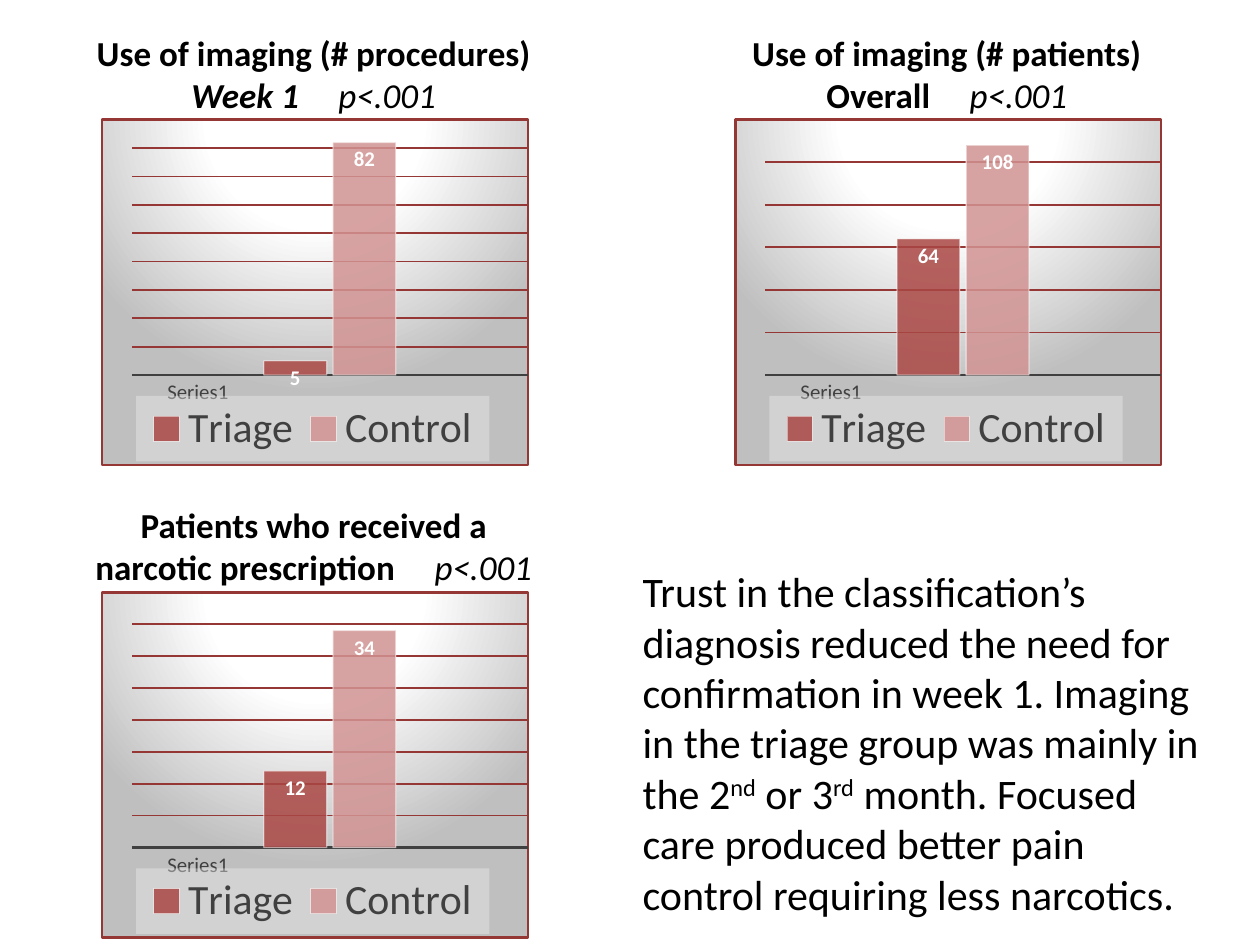
from lxml import etree
from pptx import Presentation
from pptx.chart.data import CategoryChartData
from pptx.dml.color import RGBColor
from pptx.enum import chart as charts, text
from pptx.oxml import parse_xml
from pptx.oxml.ns import qn
from pptx.util import Pt

# Content: caption lines are lists of (words, format)
BOLD, P_VALUE = {"bold": True}, {"italic": True}
GAP = (" ", {"spacing": 18})
PANELS = [
    {"caption": [[("Use of imaging (# procedures)", BOLD)],
                 [("Week 1", {"bold": True, "italic": True}), GAP, ("p<.001", P_VALUE)]],
     "values": {"Triage": 5, "Control": 82}, "scale": (90, 10)},
    {"caption": [[("Use of imaging (# patients)", BOLD)],
                 [("Overall", BOLD), GAP, ("p<.001", P_VALUE)]],
     "values": {"Triage": 64, "Control": 108}, "scale": (120, 20)},
    {"caption": [[("Patients who received a", BOLD)],
                 [("narcotic prescription", BOLD), GAP, ("p<.001", P_VALUE)]],
     "values": {"Triage": 12, "Control": 34}, "scale": (40, 5)},
]
SUMMARY = [[
    ("Trust in the classification’s diagnosis reduced the need for confirmation "
     "in week 1. Imaging in the triage group was mainly in the 2", {}),
    ("nd", {"raised": True}), (" or 3", {}), ("rd", {"raised": True}),
    (" month. Focused care produced better pain control requiring less narcotics.", {}),
]]

THEME = {
    "font": "Calibri", "ink": "000000", "grey": "404040", "frame": "953735",
    "light": "FFFFFF", "shade": "BFBFBF", "legend": "F2F2F2",
    "bars": {"Triage": "AA4744", "Control": "D19392"},
    "caption": 20, "summary": 24, "legend_size": 24, "label": 12,
}

# Layout in points
COLUMN_STEP, ROW_STEP = 361.8, 270
CAPTION = (13.68, 14.4, 331.2, 55.44)
CHART = (57.6, 67.68, 244.8, 198.72)
SUMMARY_BOX = (360, 319.68, 339.84, 210.96)
PLOT_AREA = (0.07, 0, 0.93, 0.74)
LEGEND_AREA = (0.08, 0.81, 0.83, 0.19)

NAMESPACES = ('xmlns:c="http://schemas.openxmlformats.org/drawingml/2006/chart" '
              'xmlns:a="http://schemas.openxmlformats.org/drawingml/2006/main"')


def place(box, left, top, width, height):
    box.left, box.top, box.width, box.height = Pt(left), Pt(top), Pt(width), Pt(height)


def style_font(font, size, color, bold=False, italic=False):
    font.name, font.size = THEME["font"], Pt(size)
    font.bold, font.italic = bold, italic
    font.color.rgb = RGBColor.from_string(color)


def write(box, lines, size, align, bold=False, italic=False):
    frame = box.text_frame
    frame.word_wrap = True
    frame.auto_size = text.MSO_AUTO_SIZE.NONE
    frame.vertical_anchor = text.MSO_ANCHOR.TOP
    for index, line in enumerate(lines):
        para = frame.paragraphs[0] if index == 0 else frame.add_paragraph()
        para.alignment, para.space_before = align, Pt(0)
        properties = para._p.get_or_add_pPr()
        properties.set("marL", "0")
        properties.set("indent", "0")
        etree.SubElement(properties, qn("a:buNone"))
        for words, look in line:
            span = para.add_run()
            span.text = words
            style_font(span.font, size, THEME["ink"],
                       look.get("bold", bold), look.get("italic", italic))
            if look.get("raised"):
                span.font._element.set("baseline", "30000")
            if "spacing" in look:
                span.font._element.set("spc", str(look["spacing"] * 100))


def set_alpha(fill_format, percent):
    for color in fill_format._xPr.iter(qn("a:srgbClr")):
        etree.SubElement(color, qn("a:alpha")).set("val", str(percent * 1000))


def manual_layout(area, inner=False):
    target = '<c:layoutTarget val="inner"/>' if inner else ""
    modes = "".join(f'<c:{side}Mode val="edge"/>' for side in "xy")
    sizes = "".join(f'<c:{side} val="{value}"/>' for side, value in zip("xywh", area))
    return parse_xml(f"<c:layout {NAMESPACES}><c:manualLayout>{target}{modes}{sizes}"
                     "</c:manualLayout></c:layout>")


def chart_background():
    stops = [(0, THEME["light"]), (39, THEME["light"]), (100, THEME["shade"])]
    stop_xml = "".join(f'<a:gs pos="{position * 1000}"><a:srgbClr val="{color}"/></a:gs>'
                       for position, color in stops)
    return parse_xml(
        f'<c:spPr {NAMESPACES}><a:gradFill><a:gsLst>{stop_xml}</a:gsLst><a:path path="circle">'
        '<a:fillToRect l="50000" t="-80000" r="50000" b="180000"/></a:path></a:gradFill>'
        f'<a:ln w="{Pt(1.5)}"><a:solidFill><a:srgbClr val="{THEME["frame"]}"/></a:solidFill>'
        "</a:ln></c:spPr>")


def legend_background():
    return parse_xml(
        f'<c:spPr {NAMESPACES}><a:solidFill><a:srgbClr val="{THEME["legend"]}">'
        '<a:alpha val="39000"/></a:srgbClr></a:solidFill></c:spPr>')


def add_bars(page, values, scale, left, top, width, height):
    data = CategoryChartData()
    data.categories = ["Series1", "", ""]
    for name, value in values.items():
        data.add_series(name, [None, value, None])
    chart = page.shapes.add_chart(charts.XL_CHART_TYPE.COLUMN_CLUSTERED, Pt(left), Pt(top),
                                  Pt(width), Pt(height), data).chart
    chart.has_title = False
    style_font(chart.font, 10, THEME["ink"])

    # Bars and their labels
    plot = chart.plots[0]
    plot.gap_width, plot.overlap, plot.vary_by_categories = 0, -10, False
    for series in plot.series:
        fill, line = series.format.fill, series.format.line
        fill.solid()
        fill.fore_color.rgb = RGBColor.from_string(THEME["bars"][series.name])
        set_alpha(fill, 85)
        line.width = Pt(0.75)
        line.color.rgb = RGBColor.from_string(THEME["light"])
        set_alpha(line.fill, 50)
        labels = series.data_labels
        labels.show_value = True
        labels.position = charts.XL_LABEL_POSITION.INSIDE_END
        style_font(labels.font, THEME["label"], THEME["light"], bold=True)

    # Axes
    axis, base = chart.value_axis, chart.category_axis
    axis.minimum_scale, (axis.maximum_scale, axis.major_unit) = 0, scale
    axis.visible = False
    axis.has_major_gridlines = True
    base.major_tick_mark = charts.XL_TICK_MARK.NONE
    style_font(base.tick_labels.font, THEME["label"], THEME["grey"])
    for line, color, weight in [(axis.major_gridlines.format.line, "frame", 1),
                                (base.format.line, "grey", 1.5)]:
        line.width = Pt(weight)
        line.color.rgb = RGBColor.from_string(THEME[color])

    # Legend, plot area and background
    chart.has_legend = True
    legend = chart.legend
    legend.position = charts.XL_LEGEND_POSITION.BOTTOM
    legend.include_in_layout = False
    style_font(legend.font, THEME["legend_size"], THEME["grey"])
    root = chart._chartSpace
    legend_xml = root.find(".//" + qn("c:legend"))
    for old in legend_xml.findall(qn("c:layout")):
        legend_xml.remove(old)
    legend_xml.find(qn("c:legendPos")).addnext(manual_layout(LEGEND_AREA))
    legend_xml.find(qn("c:overlay")).addnext(legend_background())
    plot_xml = root.find(".//" + qn("c:plotArea"))
    for old in plot_xml.findall(qn("c:layout")):
        plot_xml.remove(old)
    plot_xml.insert(0, manual_layout(PLOT_AREA, inner=True))
    root.find(qn("c:chart")).addnext(chart_background())


def main():
    deck = Presentation()
    deck.slide_width, deck.slide_height = Pt(720), Pt(540)
    page = deck.slides.add_slide(deck.slide_layouts[1])
    title, body = page.placeholders

    # Captioned charts on a two-column grid
    for index, panel in enumerate(PANELS):
        row, column = divmod(index, 2)
        caption_area, chart_area = (
            (left + column * COLUMN_STEP, top + row * ROW_STEP, width, height)
            for left, top, width, height in (CAPTION, CHART))
        add_bars(page, panel["values"], panel["scale"], *chart_area)
        box = title if index == 0 else page.shapes.add_textbox(0, 0, 0, 0)
        place(box, *caption_area)
        write(box, panel["caption"], THEME["caption"], text.PP_ALIGN.CENTER)

    # Summary in the free cell
    place(body, *SUMMARY_BOX)
    write(body, SUMMARY, THEME["summary"], text.PP_ALIGN.LEFT)
    deck.save("out.pptx")


if __name__ == "__main__":
    main()
